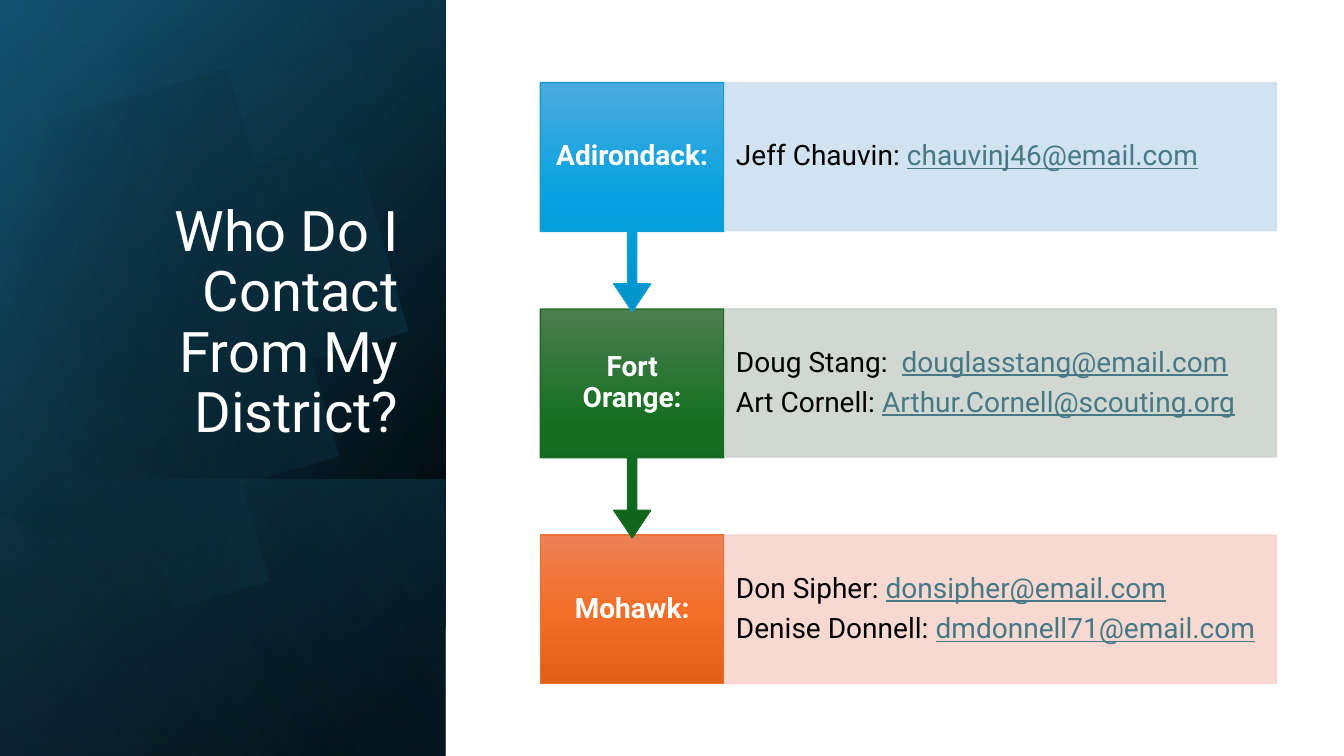
import math

import lxml.etree
import pptx
import pptx.dml.color
import pptx.enum.shapes
import pptx.enum.text
import pptx.oxml.ns
import pptx.util

Inches = pptx.util.Inches
Pt = pptx.util.Pt
qn = pptx.oxml.ns.qn
SHAPES = pptx.enum.shapes.MSO_SHAPE
ALIGN = pptx.enum.text.PP_ALIGN
ANCHOR = pptx.enum.text.MSO_ANCHOR

COLORS = {
    "white": "FFFFFF", "black": "000000", "email": "467886",
    "navy": "104862", "teal": "156082", "sky": "46B1E1",
}
FONT = "Roboto"

PANEL_BOX = (-1.54, 1.54, 7.5, 4.42)
# Box, gradient stops (position, colour, opacity) and angle
PANEL_BASE = [
    (PANEL_BOX, [(8, "black", 100), (100, "navy", 100)], 50),
    (PANEL_BOX, [(0, "black", 0), (99, "teal", 46)], 30),
    ((0.84, 3.92, 2.74, 4.42), [(2, "teal", 29), (100, "black", 30)], 130),
]
PANEL_GLOW = (PANEL_BOX, [(0, "black", 0), (99, "sky", 11)], 120)

BLOB_CENTER = (1.585, 3.345)
BLOB_TURN = 343.9
BLOB_START = (1.49, 1.1)
# Bezier segments hold three points, straight ones a single point
BLOB_SEGMENTS = [
    [(2.46, 1.12), (3.35, 1.77), (3.63, 2.75)],
    [(3.98, 3.97), (3.28, 5.23), (2.07, 5.58)],
    [(1.31, 5.8), (0.53, 5.61), (-0.03, 5.14)],
    [(-0.15, 5.03)], [(-0.15, 1.75)], [(0, 1.61)],
    [(0.23, 1.42), (0.5, 1.28), (0.8, 1.19)],
    [(1.03, 1.13), (1.26, 1.1), (1.49, 1.1)],
]

LABEL_LEFT, LABEL_WIDTH = 5.36, 1.82
CONTACT_LEFT, CONTACT_WIDTH = 7.19, 5.47
FIRST_TOP, ROW_PITCH, ROW_HEIGHT, CALLOUT_HEIGHT = 0.82, 2.245, 1.47, 2.27

DISTRICTS = [
    {"name": "Adirondack:", "shades": ["4CAADF", "05A2DF", "0092CB"],
     "line": "0F9ED5", "tint": "CCDFEF",
     "contacts": [("Jeff Chauvin: ", "chauvinj46@email.com")]},
    {"name": "Fort Orange:", "shades": ["4D7E50", "156F21", "0F661B"],
     "line": "196B24", "tint": "CCD4CD",
     "contacts": [("Doug Stang:  ", "douglasstang@email.com"),
                  ("Art Cornell: ", "Arthur.Cornell@scouting.org")]},
    {"name": "Mohawk:", "shades": ["ED8257", "F26E29", "E25F1A"],
     "line": "E97132", "tint": "F7D5CE",
     "contacts": [("Don Sipher: ", "donsipher@email.com"),
                  ("Denise Donnell: ", "dmdonnell71@email.com")]},
]


def rgb(color):
    return pptx.dml.color.RGBColor.from_string(COLORS.get(color, color))


def set_opacity(parent, percent):
    for color in parent.iter(qn("a:srgbClr")):
        lxml.etree.SubElement(color, qn("a:alpha"), val=str(percent * 1000))


def fill_gradient(shape, stops, angle, turns=True):
    """Fill with (position, colour, opacity) stops; turns ties the angle to the shape."""
    shape.fill.background()
    empty = shape.element.spPr.find(qn("a:noFill"))
    gradient = lxml.etree.Element(qn("a:gradFill"), rotWithShape=str(int(turns)))
    stop_list = lxml.etree.SubElement(gradient, qn("a:gsLst"))
    for position, color, opacity in stops:
        stop = lxml.etree.SubElement(stop_list, qn("a:gs"), pos=str(position * 1000))
        lxml.etree.SubElement(stop, qn("a:srgbClr"), val=COLORS.get(color, color))
        if opacity < 100:
            set_opacity(stop, opacity)
    lxml.etree.SubElement(gradient, qn("a:lin"), ang=str(angle * 60000), scaled="0")
    empty.getparent().replace(empty, gradient)


def add_shape(page, kind, box, line=None):
    shape = page.shapes.add_shape(kind, *map(Inches, box))
    shape.shadow.inherit = False
    if line:
        shape.line.color.rgb = rgb(line)
        shape.line.width = Pt(1)
    else:
        shape.line.fill.background()
    return shape


def write_text(shape, paragraphs, size=20, align=ALIGN.LEFT, anchor=ANCHOR.MIDDLE,
               insets=(0.1, 0.05), after=0, bold=False):
    """Write paragraphs, each a list of (text, colour, underlined) spans."""
    frame = shape.text_frame
    frame.word_wrap = True
    frame.vertical_anchor = anchor
    frame.margin_left = frame.margin_right = Inches(insets[0])
    frame.margin_top = frame.margin_bottom = Inches(insets[1])
    for index, spans in enumerate(paragraphs):
        para = frame.paragraphs[0] if index == 0 else frame.add_paragraph()
        para.alignment = align
        para.line_spacing = 0.9
        para.space_after = Pt(after)
        for text, color, underlined in spans:
            span = para.add_run()
            span.text = text
            span.font.name = FONT
            span.font.size = Pt(size)
            span.font.bold = bold
            span.font.underline = underlined
            span.font.color.rgb = rgb(color)


def add_text(page, box, text, color="white", **text_format):
    write_text(page.shapes.add_textbox(*map(Inches, box)),
               [[(text, color, False)]], **text_format)


def add_panel_layer(page, box, stops, angle):
    layer = add_shape(page, SHAPES.RECTANGLE, box)
    fill_gradient(layer, stops, angle)
    layer.rotation = 90
    layer.element.spPr.find(qn("a:xfrm")).set("flipH", "1")


def blob_points(steps=16):
    points = [BLOB_START]
    for segment in BLOB_SEGMENTS:
        if len(segment) == 1:
            points += segment
            continue
        curve = [points[-1], *segment]
        for step in range(1, steps + 1):
            t = step / steps
            weights = [math.comb(3, k) * t**k * (1 - t)**(3 - k) for k in range(4)]
            points.append(tuple(sum(w * p[axis] for w, p in zip(weights, curve))
                                for axis in (0, 1)))
    return points


def add_blob(page):
    """Draw the round glow upright, then turn it into place."""
    angle = math.radians(360 - BLOB_TURN)
    center_x, center_y = BLOB_CENTER
    upright = []
    for x, y in blob_points():
        dx, dy = x - center_x, y - center_y
        upright.append((center_x + dx * math.cos(angle) - dy * math.sin(angle),
                        center_y + dx * math.sin(angle) + dy * math.cos(angle)))
    builder = page.shapes.build_freeform(*upright[0], scale=Inches(1))
    builder.add_line_segments(upright[1:], close=True)
    blob = builder.convert_to_shape()
    blob.shadow.inherit = False
    blob.line.fill.background()
    blob.rotation = BLOB_TURN
    fill_gradient(blob, [(29, "black", 0), (100, "teal", 43)], 30)


def add_district(page, district, top, is_last):
    label_box = (LABEL_LEFT, top, LABEL_WIDTH, ROW_HEIGHT)
    if is_last:
        label = add_shape(page, SHAPES.RECTANGLE, label_box, district["line"])
    else:
        callout_box = (LABEL_LEFT, top, LABEL_WIDTH, CALLOUT_HEIGHT)
        label = add_shape(page, SHAPES.UP_ARROW_CALLOUT, callout_box, district["line"])
        label.rotation = 180
        for index, value in enumerate((0.05, 0.1, 0.15, 0.65)):
            label.adjustments[index] = value
    stops = [(50 * index, shade, 100) for index, shade in enumerate(district["shades"])]
    fill_gradient(label, stops, 90, turns=False)
    add_text(page, label_box, district["name"], align=ALIGN.CENTER,
             insets=(0.13, 0.16), after=7, bold=True)

    contact_box = (CONTACT_LEFT, top, CONTACT_WIDTH, ROW_HEIGHT)
    contact = add_shape(page, SHAPES.RECTANGLE, contact_box, district["tint"])
    contact.fill.solid()
    contact.fill.fore_color.rgb = rgb(district["tint"])
    set_opacity(contact.element.spPr, 90)
    write_text(contact, [[(person, "black", False), (email, "email", True)]
                         for person, email in district["contacts"]],
               insets=(0.11, 0.28), after=7)


def main():
    deck = pptx.Presentation()
    deck.slide_width, deck.slide_height = Inches(13.33), Inches(7.5)
    page = deck.slides.add_slide(deck.slide_layouts[6])
    for layer in PANEL_BASE:
        add_panel_layer(page, *layer)
    add_blob(page)
    add_panel_layer(page, *PANEL_GLOW)
    add_text(page, (0.64, 1.84, 3.41, 2.62), "Who Do I Contact From My District?",
             size=40, align=ALIGN.RIGHT, anchor=ANCHOR.BOTTOM)
    last = len(DISTRICTS) - 1
    # Bottom row first, so that each arrow tip lies over the row below
    for row in range(last, -1, -1):
        add_district(page, DISTRICTS[row], FIRST_TOP + row * ROW_PITCH, row == last)
    deck.save("out.pptx")


if __name__ == "__main__":
    main()
